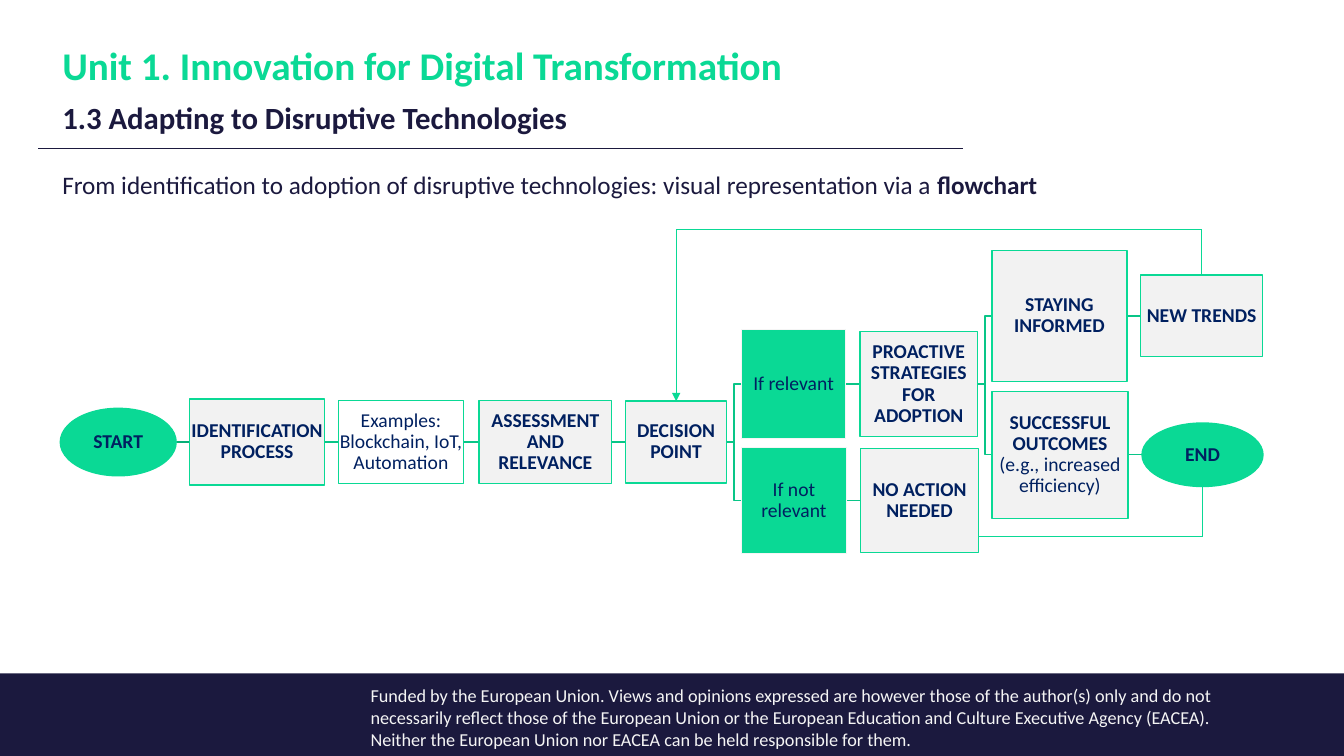
from lxml.etree import SubElement
from pptx import Presentation
from pptx.dml.color import RGBColor
from pptx.enum.shapes import MSO_CONNECTOR, MSO_SHAPE
from pptx.enum.text import MSO_ANCHOR, PP_ALIGN
from pptx.oxml.ns import qn
from pptx.util import Cm, Pt

NAVY = RGBColor(0x1B, 0x19, 0x3E)
INK = RGBColor(0x00, 0x20, 0x60)
GREEN = RGBColor(0x0A, 0xD9, 0x95)
LINK = RGBColor(0x09, 0xC5, 0x87)
FIRST = RGBColor(0x08, 0xAE, 0x77)
PALE = RGBColor(0xF5, 0xF5, 0xF5)
GREY = RGBColor(0xF2, 0xF2, 0xF2)
WHITE = RGBColor(0xFF, 0xFF, 0xFF)

RECT, OVAL = MSO_SHAPE.RECTANGLE, MSO_SHAPE.OVAL

# name: left, middle, width, height, shape, fill, border, bold text, plain text
NODES = {
    "start": (0, 5.35, 2.92, 1.7, OVAL, GREEN, GREEN, "START", ""),
    "identify": (3.26, 5.35, 3.4, 2.16, RECT, GREY, GREEN, "IDENTIFICATION PROCESS", ""),
    "examples": (7.01, 5.35, 3.15, 2.08, RECT, WHITE, GREEN, "",
                 "Examples: Blockchain, IoT, Automation"),
    "assess": (10.55, 5.35, 3.35, 2.08, RECT, GREY, GREEN, "ASSESSMENT AND RELEVANCE", ""),
    "decide": (14.25, 5.35, 2.54, 2.06, RECT, GREY, GREEN, "DECISION POINT", ""),
    "yes": (17.17, 3.89, 2.62, 2.74, RECT, GREEN, PALE, "", "If relevant"),
    "adopt": (20.15, 3.89, 2.97, 2.64, RECT, GREY, GREEN,
              "PROACTIVE STRATEGIES FOR ADOPTION", ""),
    "inform": (23.48, 2.17, 3.4, 3.3, RECT, GREY, GREEN, "STAYING INFORMED", ""),
    "trends": (27.23, 2.17, 3.07, 2.06, RECT, GREY, GREEN, "NEW TRENDS", ""),
    "success": (23.48, 5.67, 3.43, 3.2, RECT, GREY, GREEN,
                "SUCCESSFUL OUTCOMES ", "(e.g., increased efficiency)"),
    "end": (27.26, 5.67, 3.05, 1.6, OVAL, GREEN, GREEN, "END", ""),
    "no": (17.17, 6.82, 2.64, 2.67, RECT, GREEN, PALE, "", "If not relevant"),
    "stop": (20.17, 6.82, 2.97, 2.62, RECT, GREY, GREEN, "NO ACTION NEEDED", ""),
}
LINKS = [
    ("start", "identify"), ("identify", "examples"), ("examples", "assess"),
    ("assess", "decide"), ("decide", "yes"), ("decide", "no"), ("yes", "adopt"),
    ("no", "stop"), ("adopt", "inform"), ("adopt", "success"),
    ("inform", "trends"), ("success", "end"),
]


def style(para, size, color, bold=None, align=PP_ALIGN.LEFT):
    para.alignment = align
    font = para.font
    font.name, font.size, font.bold = "Calibri", Pt(size), bold
    font.color.rgb = color


def textbox(slide, left, top, width, height):
    frame = slide.shapes.add_textbox(Cm(left), Cm(top), Cm(width), Cm(height)).text_frame
    frame.word_wrap = True
    return frame


def line(slide, begin, end, color, weight, arrow=False):
    kind = MSO_CONNECTOR.STRAIGHT
    if begin[0] != end[0] and begin[1] != end[1]:
        kind = MSO_CONNECTOR.ELBOW
    wire = slide.shapes.add_connector(kind, *map(Cm, begin + end))
    wire.line.color.rgb = color
    wire.line.width = Pt(weight)
    if arrow:
        SubElement(wire.line._get_or_add_ln(), qn("a:tailEnd"), type="triangle")
    SubElement(wire._element.spPr, qn("a:effectLst"))


def block(slide, left, top, width, height, kind, fill, border=None):
    shape = slide.shapes.add_shape(kind, Cm(left), Cm(top), Cm(width), Cm(height))
    shape.shadow.inherit = False
    shape.fill.solid()
    shape.fill.fore_color.rgb = fill
    if border is None:
        shape.line.fill.background()
    else:
        shape.line.color.rgb = border
        shape.line.width = Pt(1)
    return shape


def header(slide, left, top, width, height):
    frame = textbox(slide, left + 0.35, top, width, height)
    frame.vertical_anchor = MSO_ANCHOR.BOTTOM
    title = frame.paragraphs[0]
    title.text = "Unit 1. Innovation for Digital Transformation"
    style(title, 28, GREEN, True)
    topic = frame.add_paragraph()
    topic.text = "1.3 Adapting to Disruptive Technologies"
    topic.space_before = Pt(10)
    style(topic, 22, NAVY, True)
    title.line_spacing = topic.line_spacing = 0.9
    rule = top + height + 0.18
    line(slide, (left, rule), (left + 23.29, rule), NAVY, 1)


def intro(slide, left, top, width, height):
    para = textbox(slide, left, top, width, height).paragraphs[0]
    para.add_run().text = ("From identification to adoption of disruptive technologies: "
                           "visual representation via a ")
    word = para.add_run()
    word.text = "flowchart"
    word.font.bold = True
    style(para, 18, NAVY)


def node(slide, left, top, width, height, kind, fill, border, strong, plain):
    frame = block(slide, left, top, width, height, kind, fill, border).text_frame
    frame.word_wrap = True
    frame.vertical_anchor = MSO_ANCHOR.MIDDLE
    frame.margin_left = frame.margin_right = Cm(0.03)
    frame.margin_top = frame.margin_bottom = Cm(0.03)
    para = frame.paragraphs[0]
    for text, bold in ((strong, True), (plain, False)):
        if text:
            run = para.add_run()
            run.text = text
            run.font.bold = bold
    para.line_spacing = 0.9
    style(para, 14, INK, align=PP_ALIGN.CENTER)


def flow(slide, left, top, width, height):
    for source, target in LINKS:
        x, y, w = NODES[source][:3]
        to_x, to_y = NODES[target][:2]
        color = FIRST if source == "start" else LINK
        line(slide, (left + x + w, top + y), (left + to_x, top + to_y), color, 1)

    for x, y, w, h, *look in NODES.values():
        node(slide, left + x, top + y - h / 2, w, h, *look)

    def edge(name, side):
        x, y, w, h = NODES[name][:4]
        return left + x + w / 2, top + y + side * h / 2

    back, goal = edge("trends", -1), edge("decide", -1)
    line(slide, (back[0], top), back, GREEN, 0.5)
    line(slide, (goal[0], top), (back[0], top), GREEN, 0.5)
    line(slide, (goal[0], top), goal, GREEN, 0.5, True)

    final = edge("end", 1)
    x, _, w = NODES["stop"][:3]
    base = top + height
    line(slide, (left + x + w, base), (final[0], base), GREEN, 0.5)
    line(slide, (final[0], base), final, GREEN, 0.5)


def footer(slide, left, top, width, height):
    block(slide, left, top, width, height, RECT, NAVY)
    para = textbox(slide, left + 9.09, top + 0.15, 22.45, 1.93).paragraphs[0]
    para.text = ("Funded by the European Union. Views and opinions expressed are however "
                 "those of the author(s) only and do not necessarily reflect those of the "
                 "European Union or the European Education and Culture Executive Agency "
                 "(EACEA). Neither the European Union nor EACEA can be held responsible "
                 "for them.")
    style(para, 13, PALE)


def main():
    deck = Presentation()
    deck.slide_width, deck.slide_height = Cm(33.87), Cm(19.05)
    slide = deck.slides.add_slide(deck.slide_layouts[6])
    footer(slide, 0, 16.97, 33.87, 2.08)
    header(slide, 0.97, 1.27, 25.35, 2.29)
    intro(slide, 1.32, 4.14, 31.24, 1.03)
    flow(slide, 1.52, 5.79, 30.3, 7.72)
    deck.save("out.pptx")


if __name__ == "__main__":
    main()
